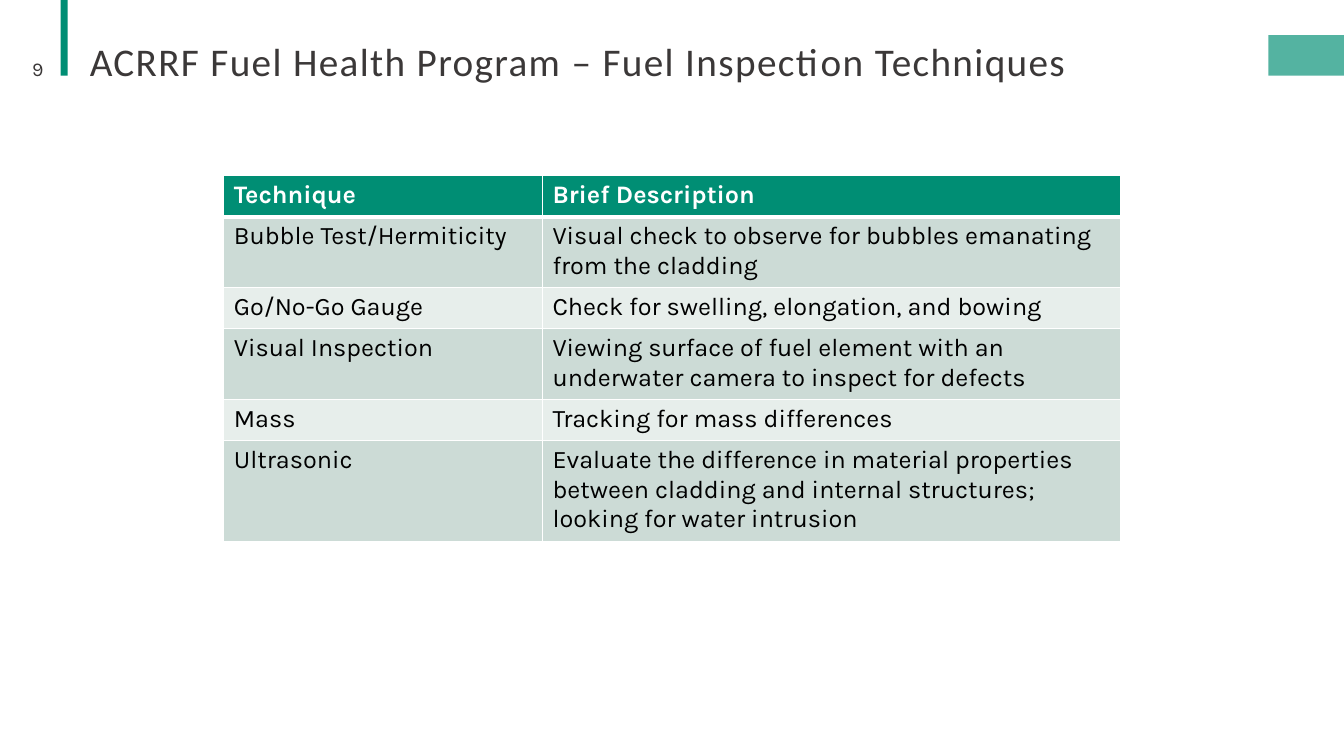
from dataclasses import dataclass

from lxml.etree import SubElement
from pptx import Presentation
from pptx.dml.color import RGBColor
from pptx.enum.shapes import MSO_SHAPE
from pptx.enum.text import MSO_ANCHOR, MSO_AUTO_SIZE, PP_ALIGN
from pptx.oxml.ns import qn
from pptx.slide import Slide
from pptx.table import _Cell
from pptx.text.text import _Paragraph, _Run
from pptx.util import Inches, Pt


@dataclass(frozen=True)
class Theme:
    accent: str = "008E74"
    dark_text: str = "3B3838"
    table_text: str = "000000"
    white: str = "FFFFFF"
    bands: tuple[str, str] = ("CCDBD6", "E7EEEB")
    title_font: str = "Calibri"
    body_font: str = "Karla"
    title_size: int = 28
    table_size: int = 18
    number_size: int = 14
    thin_border: int = 1
    header_border: int = 3


@dataclass(frozen=True)
class Box:
    left: float
    top: float
    width: float
    height: float

    def lengths(self) -> tuple[int, int, int, int]:
        return (Inches(self.left), Inches(self.top),
                Inches(self.width), Inches(self.height))


@dataclass(frozen=True)
class Bar:
    box: Box
    rotation: int = 0
    opacity: int = 100


@dataclass(frozen=True)
class Technique:
    name: str
    description: str


THEME = Theme()
BARS = (
    Bar(Box(0.26, 0.34, 0.75, 0.07), rotation=90),
    Bar(Box(12.58, 0.35, 0.75, 0.4), opacity=67),
)
TITLE_BOX = Box(0.79, 0.39, 11.16, 0.62)
NUMBER_BOX = Box(0.07, 0.48, 0.46, 0.4)
TABLE_BOX = Box(2.22, 1.74, 8.89, 3.62)
COLUMN_WIDTHS = (3.16, 5.73)
ROW_HEIGHT = 0.41
HEADER = Technique("Technique", "Brief Description")
TECHNIQUES = (
    Technique("Bubble Test/Hermiticity",
              "Visual check to observe for bubbles emanating from the cladding"),
    Technique("Go/No-Go Gauge", "Check for swelling, elongation, and bowing"),
    Technique("Visual Inspection",
              "Viewing surface of fuel element with an underwater camera to inspect for defects"),
    Technique("Mass", "Tracking for mass differences"),
    Technique("Ultrasonic",
              "Evaluate the difference in material properties between cladding and "
              "internal structures; looking for water intrusion"),
)


def add_run(paragraph: _Paragraph, text: str, font_name: str, size: int,
            color: str, bold: bool = False) -> _Run:
    run = paragraph.add_run()
    run.text = text
    run.font.name = font_name
    run.font.size = Pt(size)
    run.font.bold = bold
    run.font.color.rgb = RGBColor.from_string(color)
    return run


def add_bar(slide: Slide, bar: Bar) -> None:
    shape = slide.shapes.add_shape(MSO_SHAPE.RECTANGLE, *bar.box.lengths())
    shape.rotation = bar.rotation
    shape.shadow.inherit = False
    shape.line.fill.background()
    shape.fill.solid()
    shape.fill.fore_color.rgb = RGBColor.from_string(THEME.accent)
    if bar.opacity < 100:
        color = shape.fill._xPr.find(f".//{qn('a:srgbClr')}")
        SubElement(color, qn("a:alpha"), val=str(bar.opacity * 1000))


def add_title(slide: Slide, text: str) -> None:
    title = slide.shapes.title
    title.left, title.top, title.width, title.height = TITLE_BOX.lengths()
    frame = title.text_frame
    frame.auto_size = MSO_AUTO_SIZE.NONE
    frame.vertical_anchor = MSO_ANCHOR.TOP
    paragraph = frame.paragraphs[0]
    paragraph.alignment = PP_ALIGN.LEFT
    paragraph.line_spacing = 0.85
    run = add_run(paragraph, text, THEME.title_font, THEME.title_size, THEME.dark_text)
    run.font._element.set("spc", "100")


def add_slide_number(slide: Slide, number: str) -> None:
    frame = slide.shapes.add_textbox(*NUMBER_BOX.lengths()).text_frame
    frame.word_wrap = True
    frame.vertical_anchor = MSO_ANCHOR.MIDDLE
    paragraph = frame.paragraphs[0]
    paragraph.alignment = PP_ALIGN.RIGHT
    add_run(paragraph, number, THEME.body_font, THEME.number_size, THEME.dark_text)


def set_borders(cell: _Cell, top: int, bottom: int) -> None:
    """Draw white cell borders; widths are in points."""
    properties = cell._tc.get_or_add_tcPr()
    widths = {"L": THEME.thin_border, "R": THEME.thin_border, "T": top, "B": bottom}
    for side, width in widths.items():
        line = SubElement(properties, qn(f"a:ln{side}"), w=str(Pt(width)))
        fill = SubElement(line, qn("a:solidFill"))
        SubElement(fill, qn("a:srgbClr"), val=THEME.white)


def add_technique_table(slide: Slide) -> None:
    entries = (HEADER, *TECHNIQUES)
    graphic_frame = slide.shapes.add_table(
        len(entries), len(COLUMN_WIDTHS), *TABLE_BOX.lengths())
    table = graphic_frame.table
    for column, width in zip(table.columns, COLUMN_WIDTHS):
        column.width = Inches(width)
    for index, entry in enumerate(entries):
        is_header = index == 0
        table.rows[index].height = Inches(ROW_HEIGHT)
        background = THEME.accent if is_header else THEME.bands[(index - 1) % 2]
        color = THEME.white if is_header else THEME.table_text
        top = THEME.header_border if index == 1 else THEME.thin_border
        bottom = THEME.header_border if is_header else THEME.thin_border
        for cell, text in zip(table.rows[index].cells, (entry.name, entry.description)):
            set_borders(cell, top, bottom)
            cell.fill.solid()
            cell.fill.fore_color.rgb = RGBColor.from_string(background)
            add_run(cell.text_frame.paragraphs[0], text, THEME.body_font,
                    THEME.table_size, color, bold=is_header)
    graphic_frame.height = Inches(TABLE_BOX.height)


def main() -> None:
    presentation = Presentation()
    presentation.slide_width = Inches(13.33)
    presentation.slide_height = Inches(7.5)
    slide = presentation.slides.add_slide(
        presentation.slide_layouts.get_by_name("Title Only"))
    for bar in BARS:
        add_bar(slide, bar)
    add_title(slide, "ACRRF Fuel Health Program – Fuel Inspection Techniques")
    add_slide_number(slide, "9")
    add_technique_table(slide)
    presentation.save("out.pptx")


if __name__ == "__main__":
    main()
